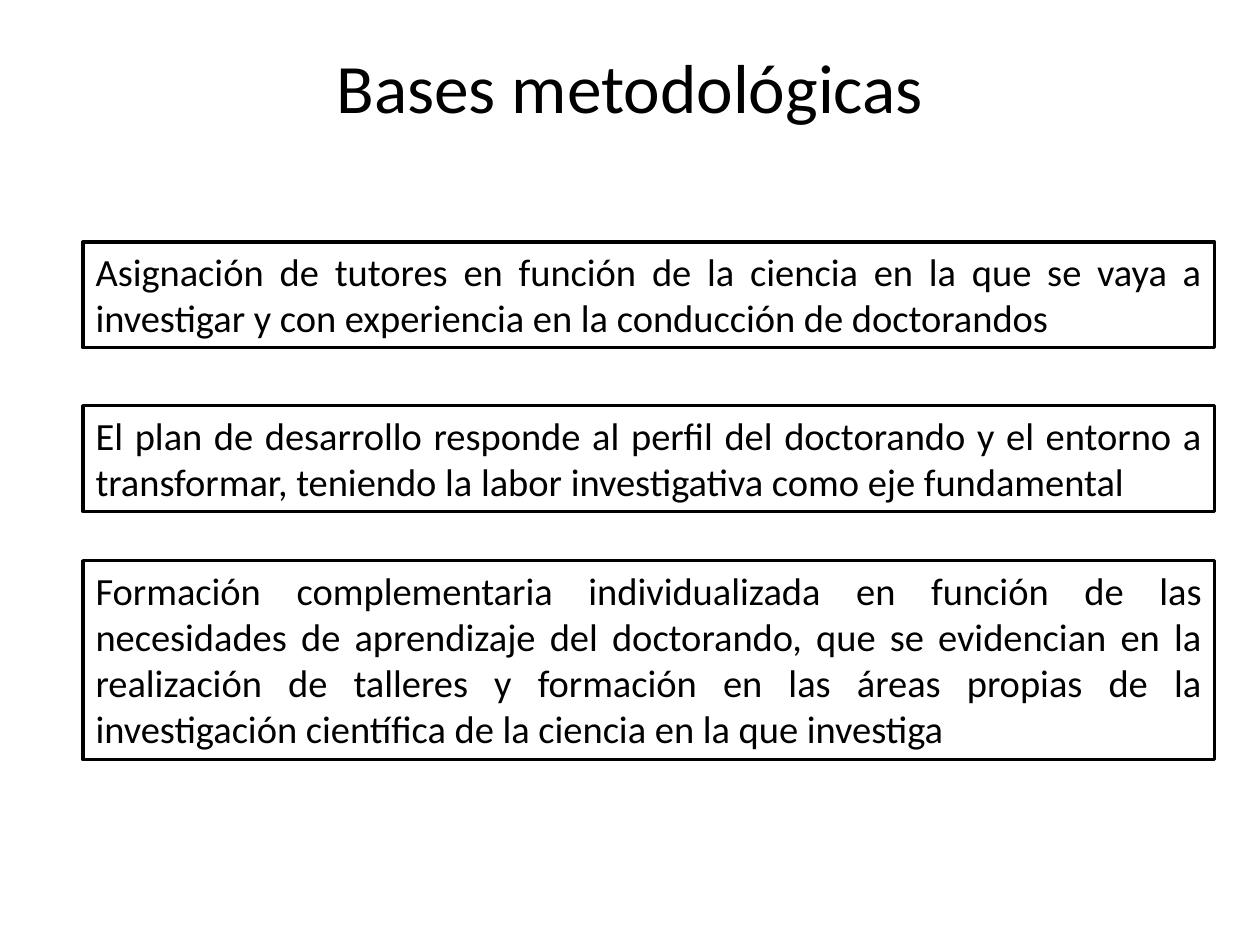
from pptx import Presentation
from pptx.dml.color import RGBColor
from pptx.enum.shapes import MSO_SHAPE
from pptx.enum.text import MSO_ANCHOR, PP_ALIGN
from pptx.util import Inches, Pt

RECTANGLE = MSO_SHAPE.RECTANGLE
TOP, MIDDLE = MSO_ANCHOR.TOP, MSO_ANCHOR.MIDDLE
CENTER, JUSTIFY = PP_ALIGN.CENTER, PP_ALIGN.JUSTIFY

BLACK, WHITE = "000000", "FFFFFF"
FONT = "Calibri"
BOX_LEFT, BOX_WIDTH = 0.66, 8.98

TITLE = "Bases metodológicas"
# top, height, text
PRINCIPLES = [
    (1.92, 0.84, "Asignación de tutores en función de la ciencia en la que se vaya a "
                 "investigar y con experiencia en la conducción de doctorandos"),
    (3.22, 0.84, "El plan de desarrollo responde al perfil del doctorando y el entorno a "
                 "transformar, teniendo la labor investigativa como eje fundamental"),
    (4.45, 1.58, "Formación complementaria individualizada en función de las "
                 "necesidades de aprendizaje del doctorando, que se evidencian en la "
                 "realización de talleres y formación en las áreas propias de la "
                 "investigación científica de la ciencia en la que investiga"),
]


def color(value):
    return RGBColor.from_string(value)


def write_text(shape, text, *, size, align, anchor):
    frame = shape.text_frame
    frame.word_wrap = True
    frame.vertical_anchor = anchor
    paragraph = frame.paragraphs[0]
    paragraph.alignment = align
    run = paragraph.add_run()
    run.text = text
    run.font.name = FONT
    run.font.size = Pt(size)
    run.font.color.rgb = color(BLACK)


def add_principle(slide, top, height, text):
    """Add one outlined box with justified text."""
    box = slide.shapes.add_shape(RECTANGLE, Inches(BOX_LEFT), Inches(top),
                                 Inches(BOX_WIDTH), Inches(height))
    box.shadow.inherit = False
    box.fill.solid()
    box.fill.fore_color.rgb = color(WHITE)
    box.line.color.rgb = color(BLACK)
    box.line.width = Pt(2)
    write_text(box, text, size=22, align=JUSTIFY, anchor=TOP)


def main():
    presentation = Presentation()
    presentation.slide_width = Inches(10)
    presentation.slide_height = Inches(7.5)
    slide = presentation.slides.add_slide(presentation.slide_layouts[6])

    title = slide.shapes.add_textbox(Inches(0.5), Inches(0.3), Inches(9), Inches(0.77))
    write_text(title, TITLE, size=39.6, align=CENTER, anchor=MIDDLE)
    for top, height, text in PRINCIPLES:
        add_principle(slide, top, height, text)

    presentation.save("out.pptx")


if __name__ == "__main__":
    main()
